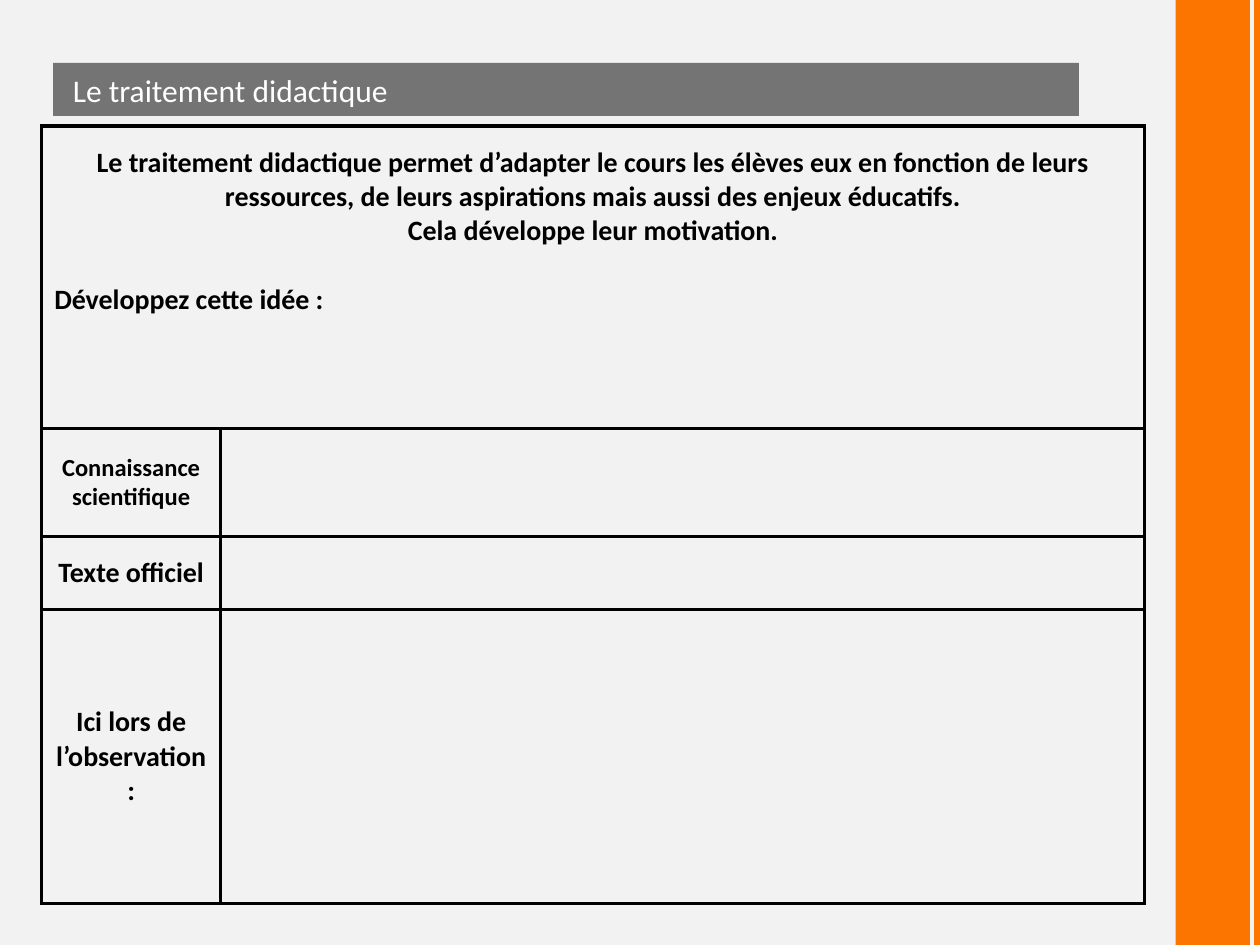
from lxml import etree
from pptx import Presentation, util as u
from pptx.dml.color import RGBColor
from pptx.enum import shapes, text
from pptx.oxml import parse_xml
from pptx.oxml.ns import nsdecls, qn

# Content
TITLE = "Le traitement didactique"
INTRO = [
    ("Le traitement didactique permet d’adapter le cours les élèves eux en fonction "
     "de leurs ressources, de leurs aspirations mais aussi des enjeux éducatifs.\v"
     "Cela développe leur motivation."),
    "Développez cette idée :",
]
ROWS = [  # label, size key, row height in cm
    ("Connaissance scientifique", "small", 2.18),
    ("Texte officiel", "body", 1.47),
    ("Ici lors de l’observation:", "body", 5.92),
]
INTRO_HEIGHT = 6.1
COLUMNS = [3.61, 18.62]

THEME = dict(font="Calibri", title=18, body=16, small=14, bg="F2F2F2", accent="FC7500",
             bar="0D0D0D", bar_alpha=55, ink="000000", light="FFFFFF", border=2.25)


def color(name):
    return RGBColor.from_string(THEME[name])


def style(p, size, ink="ink", bold=True, align=text.PP_ALIGN.CENTER):
    p.alignment = align
    for r in p.runs:
        f = r.font
        f.name, f.size, f.bold = THEME["font"], u.Pt(THEME[size]), bold
        f.color.rgb = color(ink)


def add_rect(s, x, y, w, h, fill):
    sp = s.shapes.add_shape(shapes.MSO_SHAPE.RECTANGLE, u.Cm(x), u.Cm(y), u.Cm(w), u.Cm(h))
    sp.shadow.inherit = False
    sp.fill.solid()
    sp.fill.fore_color.rgb = color(fill)
    sp.line.fill.background()
    return sp


def add_borders(cell):
    tc_pr = cell._tc.get_or_add_tcPr()
    for i, side in enumerate("LRTB"):
        tc_pr.insert(i, parse_xml(
            f'<a:ln{side} {nsdecls("a")} w="{u.Pt(THEME["border"])}"><a:solidFill>'
            f'<a:srgbClr val="{THEME["ink"]}"/></a:solidFill></a:ln{side}>'))


prs = Presentation()
prs.slide_width, prs.slide_height = u.Cm(25.4), u.Cm(19.05)
s = prs.slides.add_slide(prs.slide_layouts[6])
s.background.fill.solid()
s.background.fill.fore_color.rgb = color("bg")

# Side band and edge line
add_rect(s, 23.7, 0, 1.5, 19.05, "accent")
edge = s.shapes.add_connector(shapes.MSO_CONNECTOR.STRAIGHT,
                              u.Cm(25.35), 0, u.Cm(25.35), prs.slide_height)
edge.line.color.rgb = color("accent")
edge.line.width = u.Pt(4)
etree.SubElement(edge._element.spPr, qn("a:effectLst"))

# Title bar
bar = add_rect(s, 1.07, 1.27, 20.68, 1.07, "bar")
rgb = bar._element.spPr.find(qn("a:solidFill")).find(qn("a:srgbClr"))
etree.SubElement(rgb, qn("a:alpha")).set("val", str(THEME["bar_alpha"] * 1000))
tf = bar.text_frame
tf.text = TITLE
tf.margin_left = u.Cm(0.4)
tf.margin_top = tf.margin_bottom = 0
tf.vertical_anchor = text.MSO_ANCHOR.MIDDLE
style(tf.paragraphs[0], "title", "light", False, text.PP_ALIGN.LEFT)

# Table grid
heights = [INTRO_HEIGHT] + [h for _, _, h in ROWS]
table = s.shapes.add_table(len(heights), len(COLUMNS), u.Cm(0.84), u.Cm(2.54),
                           u.Cm(sum(COLUMNS)), u.Cm(sum(heights))).table
table.first_row = table.horz_banding = False
for col, w in zip(table.columns, COLUMNS):
    col.width = u.Cm(w)
for row, h in zip(table.rows, heights):
    row.height = u.Cm(h)
for cell in table.iter_cells():
    cell.fill.background()
    add_borders(cell)
    cell.vertical_anchor = text.MSO_ANCHOR.MIDDLE

# Introduction across both columns
intro = table.cell(0, 0)
intro.merge(table.cell(0, 1))
intro.vertical_anchor = text.MSO_ANCHOR.TOP
intro.margin_top = u.Cm(0.4)
tf = intro.text_frame
tf.text = "\n".join(INTRO)
style(tf.paragraphs[0], "body")
style(tf.paragraphs[1], "body", align=text.PP_ALIGN.LEFT)
tf.paragraphs[1].space_before = u.Pt(19.5)

# Row labels
for i, (label, size, _) in enumerate(ROWS, 1):
    tf = table.cell(i, 0).text_frame
    tf.text = label
    style(tf.paragraphs[0], size)

prs.save("out.pptx")
